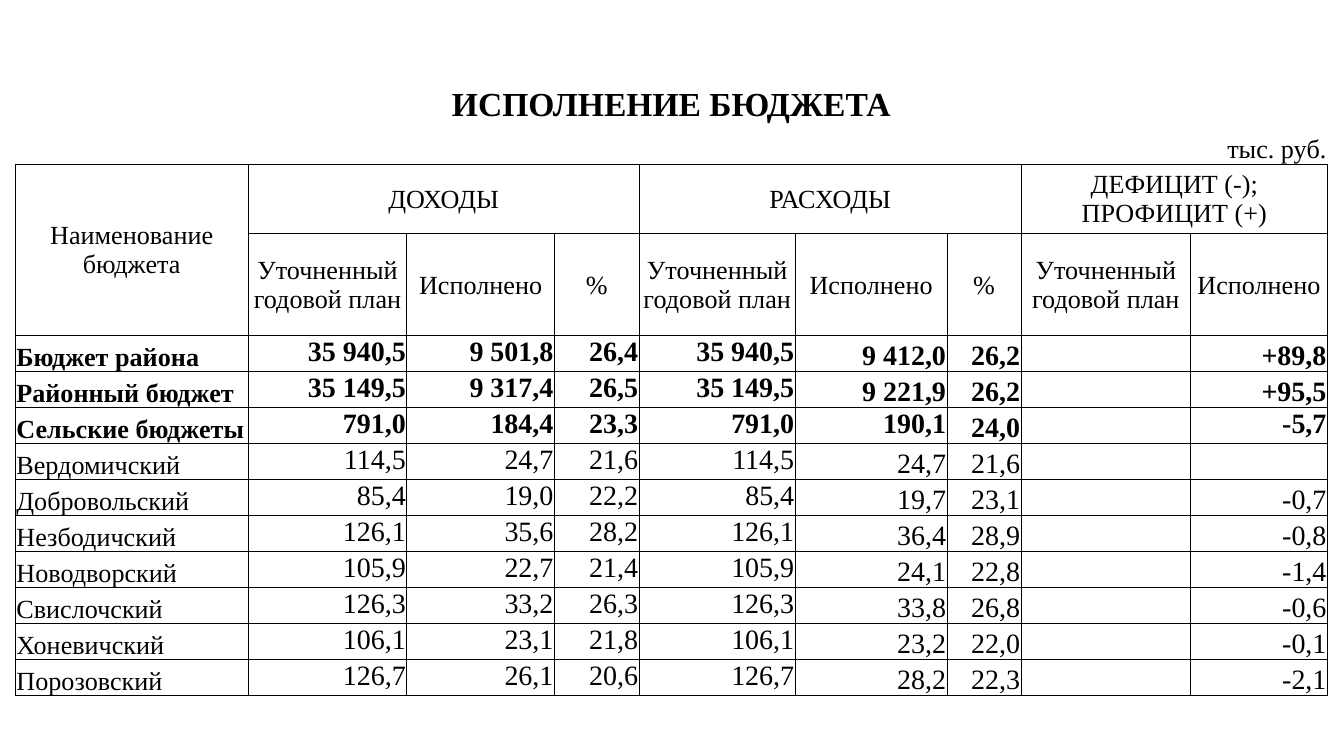
from lxml import etree
from pptx import Presentation
from pptx import util as u
from pptx.dml.color import RGBColor
from pptx.enum import text
from pptx.oxml import ns

COLORS = {"ink": "000000"}
FONT = "Times New Roman"
TITLE = "ИСПОЛНЕНИЕ БЮДЖЕТА"
UNIT = "тыс. руб."
NAME_HEADER = "Наименование бюджета"
GROUPS = [("ДОХОДЫ", 1, 5), ("РАСХОДЫ", 6, 4), ("ДЕФИЦИТ (-); ПРОФИЦИТ (+)", 10, 3)]
PLAN, DONE, SHARE = "Уточненный годовой план", "Исполнено", "%"
FIELDS = [
    (PLAN, 1, 2), (DONE, 3, 2), (SHARE, 5, 1),
    (PLAN, 6, 1), (DONE, 7, 2), (SHARE, 9, 1),
    (PLAN, 10, 1), (DONE, 11, 2),
]
BUDGETS = [
    ("Бюджет района", "35 940,5", "9 501,8", "26,4", "35 940,5", "9 412,0", "26,2", "", "+89,8"),
    ("Районный бюджет", "35 149,5", "9 317,4", "26,5", "35 149,5", "9 221,9", "26,2", "", "+95,5"),
    ("Сельские бюджеты", "791,0", "184,4", "23,3", "791,0", "190,1", "24,0", "", "-5,7"),
    ("Вердомичский", "114,5", "24,7", "21,6", "114,5", "24,7", "21,6", "", ""),
    ("Добровольский", "85,4", "19,0", "22,2", "85,4", "19,7", "23,1", "", "-0,7"),
    ("Незбодичский", "126,1", "35,6", "28,2", "126,1", "36,4", "28,9", "", "-0,8"),
    ("Новодворский", "105,9", "22,7", "21,4", "105,9", "24,1", "22,8", "", "-1,4"),
    ("Свислочский", "126,3", "33,2", "26,3", "126,3", "33,8", "26,8", "", "-0,6"),
    ("Хоневичский", "106,1", "23,1", "21,8", "106,1", "23,2", "22,0", "", "-0,1"),
    ("Порозовский", "126,7", "26,1", "20,6", "126,7", "28,2", "22,3", "", "-2,1"),
]
SUMMARY_ROWS = 3
RURAL_TOTAL = "Сельские бюджеты"
COLUMN_WIDTHS = [4.4, 2.57, 0.43, 1.85, 0.94, 1.6, 2.95, 2.29, 0.58, 1.4, 3.2, 0.3, 2.29]
HEADER_HEIGHTS = [0.86, 0.69, 1.32, 1.93]
BODY_HEIGHT = 0.68
LEFT, TOP = 0.29, 1.55
ALIGN = text.PP_ALIGN
ANCHOR = text.MSO_ANCHOR


def write(cell, wording, size=14, bold=False, align=ALIGN.CENTER, anchor=ANCHOR.MIDDLE):
    cell.vertical_anchor = anchor
    paragraph = cell.text_frame.paragraphs[0]
    paragraph.alignment = align
    run = paragraph.add_run()
    run.text = wording
    run.font.name = FONT
    run.font.size = u.Pt(size)
    run.font.bold = bold
    run.font.color.rgb = RGBColor.from_string(COLORS["ink"])


def merge(table, row, column, width, height=1):
    cell = table.cell(row, column)
    if width * height > 1:
        cell.merge(table.cell(row + height - 1, column + width - 1))
    return cell


def draw_borders(cell, visible_sides):
    properties = cell._tc.get_or_add_tcPr()
    for side in "LRTB":
        line = etree.SubElement(properties, ns.qn(f"a:ln{side}"), w=str(u.Pt(0.5)))
        if side in visible_sides:
            fill = etree.SubElement(line, ns.qn("a:solidFill"))
            etree.SubElement(fill, ns.qn("a:srgbClr"), val=COLORS["ink"])
        else:
            etree.SubElement(line, ns.qn("a:noFill"))


def prepare_cells(table):
    for row_index, row in enumerate(table.rows):
        for cell in row.cells:
            cell.margin_left = cell.margin_right = cell.margin_top = u.Cm(0.02)
            cell.margin_bottom = 0
            draw_borders(cell, ("", "B")[row_index] if row_index < 2 else "LRTB")
            cell.fill.background()
            paragraph = cell.text_frame.paragraphs[0]
            etree.SubElement(paragraph._p, ns.qn("a:endParaRPr"), sz="1400")


def fill_headers(table):
    last_column = len(COLUMN_WIDTHS) - 1
    write(merge(table, 0, 0, last_column + 1), TITLE, size=18, bold=True)
    for column in (2, 4, 8, 10):
        merge(table, 1, column, 2)
    write(table.cell(1, last_column), UNIT, align=ALIGN.RIGHT, anchor=ANCHOR.BOTTOM)
    write(merge(table, 2, 0, 1, 2), NAME_HEADER)
    for row, headings in ((2, GROUPS), (3, FIELDS)):
        for heading, column, width in headings:
            write(merge(table, row, column, width), heading)


def fill_budgets(table):
    for index, (name, *values) in enumerate(BUDGETS):
        row = len(HEADER_HEIGHTS) + index
        bold = index < SUMMARY_ROWS
        top_columns = {1, 3, 5, 6} | ({7, 11} if name == RURAL_TOTAL else set())
        write(table.cell(row, 0), name, bold=bold, align=ALIGN.LEFT, anchor=ANCHOR.BOTTOM)
        for value, (_, column, width) in zip(values, FIELDS):
            cell = merge(table, row, column, width)
            if value:
                anchor = ANCHOR.TOP if column in top_columns else ANCHOR.BOTTOM
                write(cell, value, size=15, bold=bold, align=ALIGN.RIGHT, anchor=anchor)


def main():
    presentation = Presentation()
    presentation.slide_width, presentation.slide_height = u.Cm(25.4), u.Cm(14.29)
    slide = presentation.slides.add_slide(presentation.slide_layouts[6])
    heights = HEADER_HEIGHTS + [BODY_HEIGHT] * len(BUDGETS)
    table = slide.shapes.add_table(
        len(heights), len(COLUMN_WIDTHS), u.Cm(LEFT), u.Cm(TOP),
        u.Cm(sum(COLUMN_WIDTHS)), u.Cm(sum(heights)),
    ).table
    table.first_row = table.horz_banding = False
    for column, width in zip(table.columns, COLUMN_WIDTHS):
        column.width = u.Cm(width)
    for row, height in zip(table.rows, heights):
        row.height = u.Cm(height)
    prepare_cells(table)
    fill_headers(table)
    fill_budgets(table)
    presentation.save("out.pptx")


if __name__ == "__main__":
    main()
